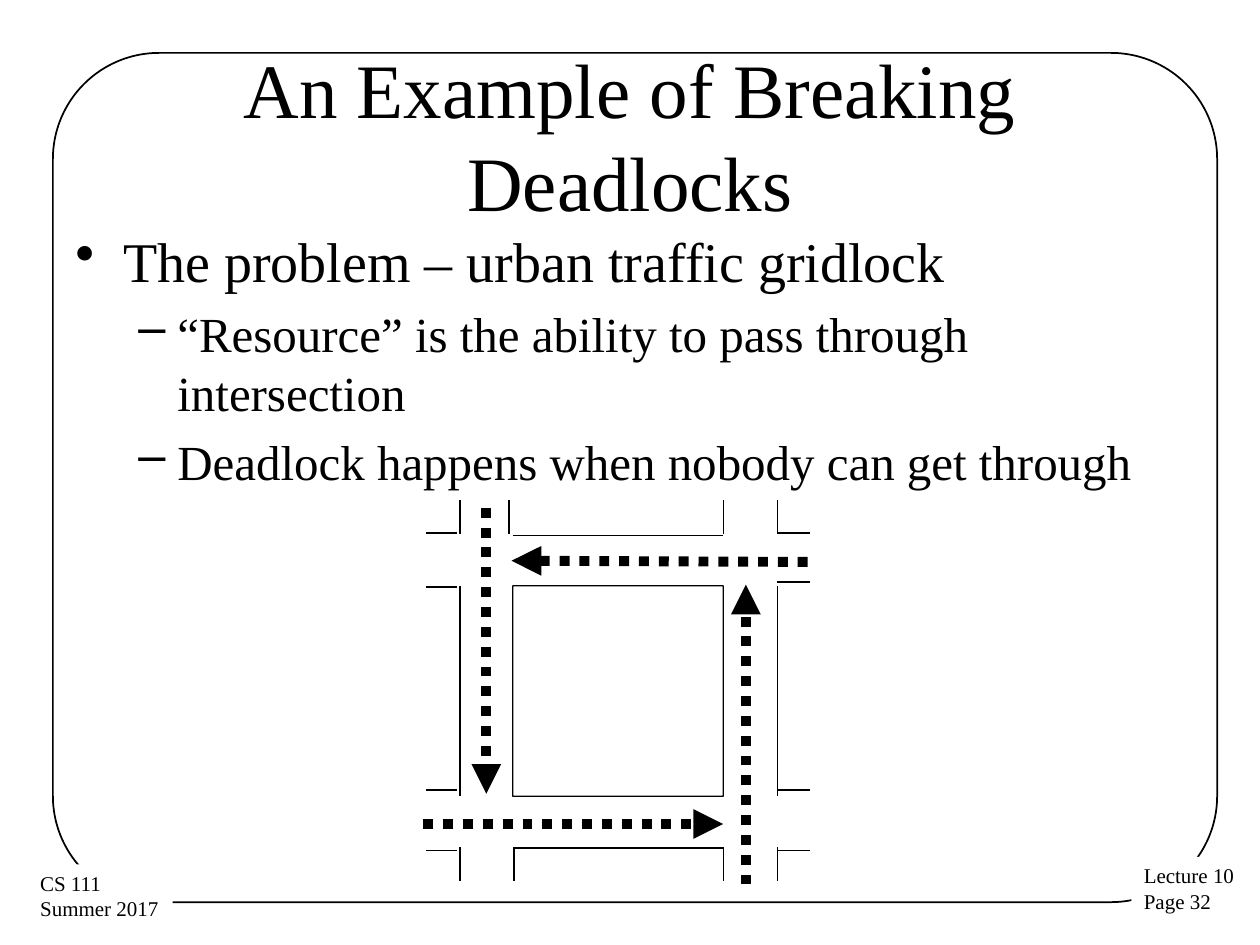
from pptx import Presentation
from pptx.dml.color import RGBColor
from pptx.enum.dml import MSO_LINE
from pptx.enum.shapes import MSO_CONNECTOR, MSO_SHAPE
from pptx.enum.text import MSO_ANCHOR, PP_ALIGN
from pptx.oxml.ns import qn
from pptx.util import Emu, Pt
from lxml import etree

SCALE = 9144  # EMU per px, 100 px to the inch
BLACK = RGBColor(0x00, 0x00, 0x00)
WHITE = RGBColor(0xFF, 0xFF, 0xFF)
FONT = "Times New Roman"
STRAIGHT = MSO_CONNECTOR.STRAIGHT
RECT, ROUNDED = MSO_SHAPE.RECTANGLE, MSO_SHAPE.ROUNDED_RECTANGLE
DOTTED = MSO_LINE.ROUND_DOT  # saved as sysDot
LEFT, CENTER = PP_ALIGN.LEFT, PP_ALIGN.CENTER
TOP, MIDDLE = MSO_ANCHOR.TOP, MSO_ANCHOR.MIDDLE

# Bullet formats by level: character, left margin, hanging indent, size
BULLETS = [("•", 38, 38, 32), ("–", 81, 31, 28)]
BODY = [
    (0, "The problem – urban traffic gridlock"),
    (1, "“Resource” is the ability to pass through intersection"),
    (1, "Deadlock happens when nobody can get through"),
]

# Street edges as x1, y1, x2, y2
BLOCK_EDGES = [
    (407, 425, 574, 425), (408, 673, 574, 673),
    (617, 465, 617, 632), (365, 465, 365, 632),
]
UPPER_STUBS = [365, 404, 574, 617]
LOWER_STUBS = [365, 408, 574, 617]
LEFT_STUBS = [423, 466, 627, 675]
RIGHT_STUBS = [423, 462, 627, 675]

# Cars moving through the four streets, arrowhead at the end
TRAFFIC = [
    (641, 446, 406, 445), (386, 403, 386, 630),
    (336, 654, 574, 654), (592, 702, 592, 464),
]


def px(n):
    return Emu(n * SCALE)


def set_text(p, text, size, align=LEFT):
    p.alignment = align
    r = p.add_run()
    r.text = text
    for name, value in {"name": FONT, "size": Pt(size)}.items():
        setattr(r.font, name, value)
    r.font.color.rgb = BLACK


def add_outline(s, box, radius, width):
    sp = s.shapes.add_shape(ROUNDED, *map(px, box))
    sp.adjustments[0] = radius
    sp.shadow.inherit = False
    sp.fill.background()
    sp.line.color.rgb = BLACK
    sp.line.width = Pt(width)


def add_label(s, box, lines):
    sp = s.shapes.add_shape(RECT, *map(px, box))
    sp.shadow.inherit = False
    sp.fill.solid()
    sp.fill.fore_color.rgb = WHITE
    sp.line.fill.background()
    tf = sp.text_frame
    tf.word_wrap = False
    tf.vertical_anchor = TOP
    for i, text in enumerate(lines):
        set_text(tf.add_paragraph() if i else tf.paragraphs[0], text, 12)


def add_textbox(s, box, anchor):
    tf = s.shapes.add_textbox(*map(px, box)).text_frame
    tf.word_wrap = True
    tf.vertical_anchor = anchor
    return tf


def add_bullets(tf, items):
    for i, (level, text) in enumerate(items):
        char, margin, hang, size = BULLETS[level]
        p = tf.add_paragraph() if i else tf.paragraphs[0]
        p.level = level
        p.space_before = Pt(size * 0.2)
        set_text(p, text, size)
        pPr = p._p.get_or_add_pPr()
        pPr.set("marL", str(px(margin)))
        pPr.set("indent", str(-px(hang)))
        etree.SubElement(pPr, qn("a:buChar")).set("char", char)


def add_line(s, ends, width=0.75):
    line = s.shapes.add_connector(STRAIGHT, *map(px, ends))
    line.line.color.rgb = BLACK
    line.line.width = Pt(width)
    etree.SubElement(line._element.spPr, qn("a:effectLst"))
    return line


def add_traffic(s, ends):
    line = add_line(s, ends, 5.67)
    line.line.dash_style = DOTTED
    ln = line.line._get_or_add_ln()
    etree.SubElement(ln, qn("a:tailEnd")).set("type", "triangle")


def add_streets(s):
    add_outline(s, (407, 465, 167, 167), 0.001, 0.75)
    edges = list(BLOCK_EDGES)
    edges += [(x, 424, x, 397) for x in UPPER_STUBS]
    edges += [(x, 699, x, 672) for x in LOWER_STUBS]
    edges += [(338, y, 363, y) for y in LEFT_STUBS]
    edges += [(617, y, 643, y) for y in RIGHT_STUBS]
    for ends in edges:
        add_line(s, ends)


def main():
    prs = Presentation()
    prs.slide_width, prs.slide_height = px(1000), px(750)
    s = prs.slides.add_slide(prs.slide_layouts[6])

    # Frame and footer labels
    add_outline(s, (42, 42, 924, 674), 0.125, 1)
    add_label(s, (898, 680, 93, 51), ["Lecture 10", "Page 32"])
    add_label(s, (22, 686, 115, 51), ["CS 111", "Summer 2017"])

    # Title and body
    title = add_textbox(s, (50, 44, 900, 125), MIDDLE)
    set_text(title.paragraphs[0], "An Example of Breaking Deadlocks", 44, CENTER)
    add_bullets(add_textbox(s, (50, 175, 900, 495), TOP), BODY)

    # Gridlock diagram
    add_streets(s)
    for ends in TRAFFIC:
        add_traffic(s, ends)

    prs.save("out.pptx")


if __name__ == "__main__":
    main()
